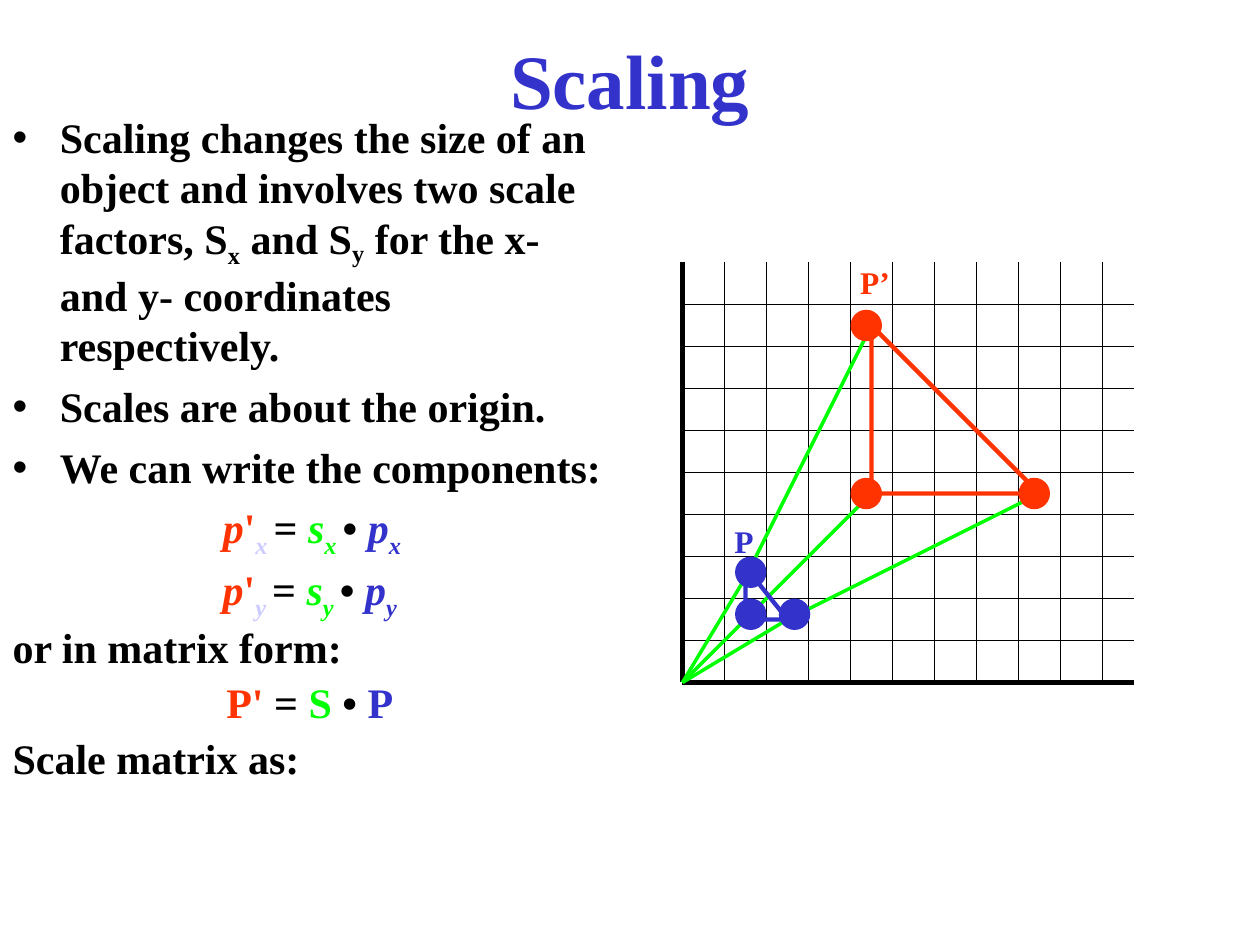
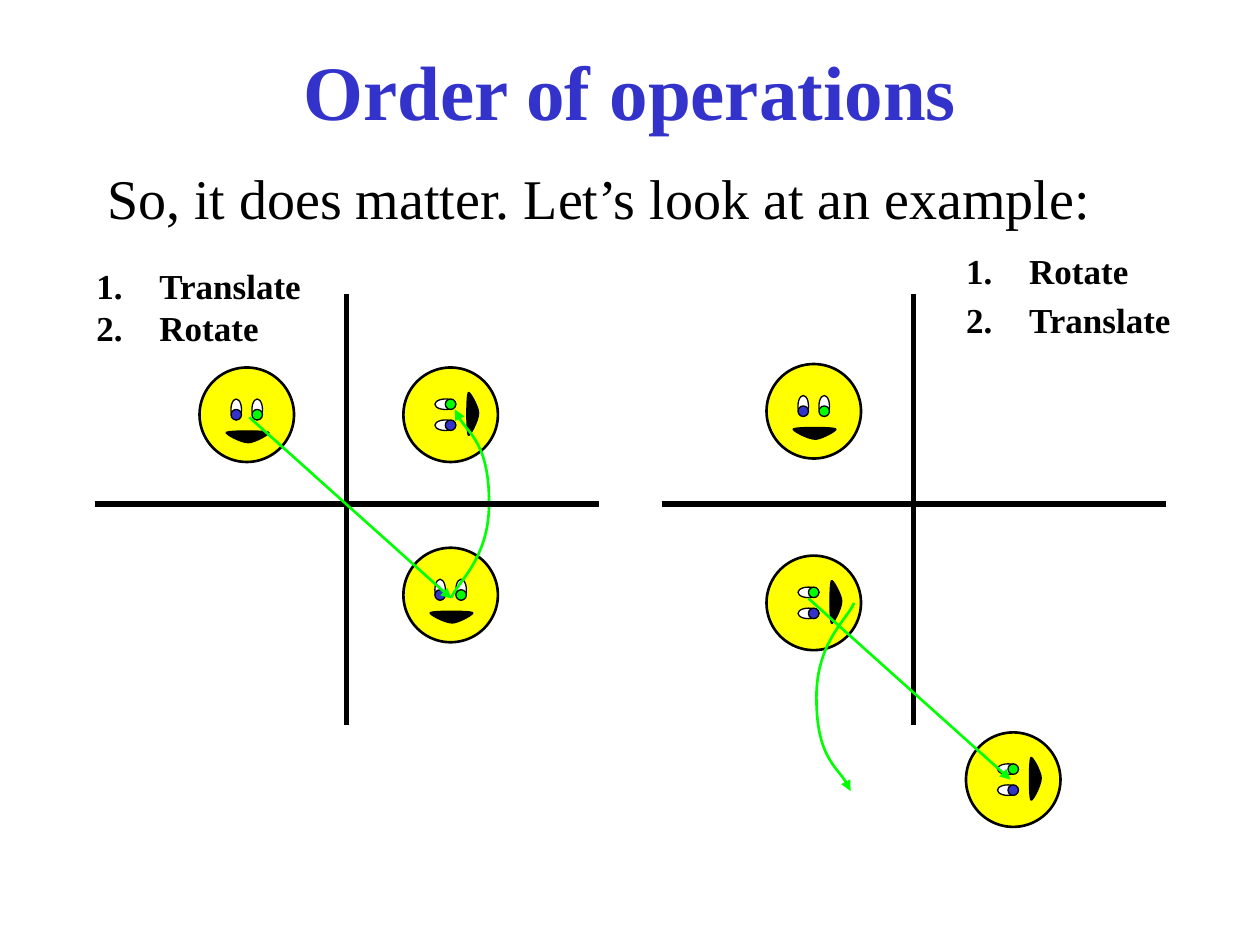
"""Build two slides on scaling and on the order of transformations."""
from lxml import etree
from pptx import Presentation
from pptx.dml.color import RGBColor
from pptx.enum.shapes import MSO_CONNECTOR, MSO_SHAPE
from pptx.enum.text import MSO_ANCHOR, MSO_AUTO_SIZE, PP_ALIGN
from pptx.oxml.ns import qn
from pptx.util import Pt

PX = 914400 // 144
FONT = "Times New Roman"
LEFT, CENTER = PP_ALIGN.LEFT, PP_ALIGN.CENTER
MIDDLE, TOP = MSO_ANCHOR.MIDDLE, MSO_ANCHOR.TOP
OVAL, STRAIGHT = MSO_SHAPE.OVAL, MSO_CONNECTOR.STRAIGHT
COLORS = {
    "black": "000000", "white": "FFFFFF", "blue": "3333CC", "red": "FF3300",
    "green": "00FF00", "pale": "CCCCFF", "yellow": "FFFF00",
}
MARKS = {
    "none": ("a:buNone", {}),
    "dot": ("a:buChar", {"char": "•"}),
    "number": ("a:buAutoNum", {"type": "arabicPeriod"}),
}


def finish(item, fill=None, line=None, weight=1, arrow=False):
    """Set fill, line and arrowhead, and switch the shadow off."""
    if hasattr(item, "fill"):
        if fill:
            item.fill.solid()
            item.fill.fore_color.rgb = RGBColor.from_string(COLORS[fill])
        else:
            item.fill.background()
    properties = item._element.spPr
    if line:
        item.line.color.rgb = RGBColor.from_string(COLORS[line])
        item.line.width = Pt(weight)
    else:
        item.line.fill.background()
    if arrow:
        etree.SubElement(properties.find(qn("a:ln")), qn("a:tailEnd"), type="triangle")
    etree.SubElement(properties, qn("a:effectLst"))


def write(shape, place, rows, size, bold=True, indent=0, gap=0, anchor=TOP, wrap=True):
    """Place a text shape and fill it with rows of (mark, align, spacing, spans)."""
    shape.left, shape.top, shape.width, shape.height = (value * PX for value in place)
    frame = shape.text_frame
    frame.auto_size = MSO_AUTO_SIZE.NONE
    frame.word_wrap = wrap
    frame.vertical_anchor = anchor
    for index, (mark, align, spacing, spans) in enumerate(rows):
        para = frame.add_paragraph() if index else frame.paragraphs[0]
        settings = para._p.get_or_add_pPr()
        settings.set("marL", str(indent * PX))
        settings.set("indent", str(-indent * PX))
        tag, attributes = MARKS[mark]
        if mark == "number":
            etree.SubElement(settings, qn("a:buFont"), typeface=FONT)
        etree.SubElement(settings, qn(tag), attributes)
        para.alignment, para.line_spacing = align, spacing
        para.space_before = Pt(gap)
        para.font.name, para.font.size, para.font.bold = FONT, Pt(size), bold
        for text, color, italic, baseline in spans:
            span = para.add_run()
            span.text = text
            span.font.color.rgb = RGBColor.from_string(COLORS[color])
            if italic:
                span.font.italic = True
            if baseline:
                span._r.get_or_add_rPr().set("baseline", str(baseline * 1000))


deck = Presentation()
deck.slide_width, deck.slide_height = 1440 * PX, 1080 * PX
scaling, order = [deck.slides.add_slide(deck.slide_layouts[1]) for _ in range(2)]

for page, text, place in [
    (scaling, "Scaling", (108, 0, 1224, 180)),
    (order, "Order of operations", (108, 48, 1224, 108)),
]:
    write(page.shapes.title, place,
          [("none", CENTER, 1.0, [(text, "blue", False, 0)])], 44, anchor=MIDDLE)

scaling_rows = [
    ("dot", LEFT, 1.0, [
        ("Scaling changes the size of an object and involves two scale factors, S",
         "black", False, 0),
        ("x", "black", False, -25),
        (" and S", "black", False, 0),
        ("y", "black", False, -20),
        (" for the x- and y- coordinates respectively.", "black", False, 0),
    ]),
]
for text in ("Scales are about the origin.", "We can write the components:"):
    scaling_rows.append(("dot", LEFT, 1.0, [(text, "black", False, 0)]))
for first, axis, last in [(" p", "x", "x "), ("p", "y", "y")]:
    scaling_rows.append(("none", CENTER, 0.9, [
        (first, "red", True, 0), ("'", "red", False, 0), (axis + " ", "pale", True, -25),
        ("= ", "black", False, 0),
        ("s", "green", True, 0), (axis + " ", "green", True, -25),
        ("• ", "black", False, 0),
        ("p", "blue", True, 0), (last, "blue", True, -25),
    ]))
scaling_rows += [
    ("none", LEFT, 0.9, [("or in matrix form:", "black", False, 0)]),
    ("none", CENTER, 0.9, [
        ("P' ", "red", False, 0), ("= ", "black", False, 0), ("S ", "green", False, 0),
        ("• ", "black", False, 0), ("P", "blue", False, 0),
    ]),
    ("none", LEFT, 0.9, [("Scale matrix as:", "black", False, 0)]),
]
write(scaling.placeholders[1], (0, 120, 708, 924), scaling_rows, 24, indent=54, gap=6)
write(order.placeholders[1], (108, 180, 1224, 72),
      [("none", LEFT, 1.0,
        [("So, it does matter. Let’s look at an example:", "black", False, 0)])],
      32, bold=False, indent=54, gap=8)

mouth = [(-24, -5), (-28, -4), (-8, 7), (1, 7), (8, 7), (28, -4), (24, -5),
         (19, -7), (-19, -7), (-24, -5)]
arc = [(-21, 108), (-14, 90), (22, 64), (22, 0), (22, -67), (-9, -85), (-17, -107)]
face_parts = [
    (0, 0, 108, 108, "yellow", 1.5),
    (-12, -6, 12, 24, "white", 0.75), (12, -6, 12, 24, "white", 0.75),
    (-12, 0, 12, 12, "blue", 0.75), (12, 0, 12, 12, "green", 0.75),
]
MOUTH_X, MOUTH_Y = 1, 25
outlines = []
for x, y, turned in [(282, 474, False), (515, 680, False), (515, 474, True),
                     (930, 470, False), (930, 689, True), (1158, 891, True)]:
    angle = 270 if turned else 0
    for dx, dy, width, height, fill, weight in face_parts:
        if turned:
            dx, dy = dy, -dx
        part = order.shapes.add_shape(
            OVAL, (x + dx) * PX - width * PX // 2, (y + dy) * PX - height * PX // 2,
            width * PX, height * PX)
        part.rotation = angle
        finish(part, fill, "black", weight)
    dx, dy = (MOUTH_Y, -MOUTH_X) if turned else (MOUTH_X, MOUTH_Y)
    outlines.append((mouth, x + dx, y + dy, angle, "black", "black", 0.75, False))

outlines += [
    (arc, 537, 575, 0, None, "green", 1.5, True),
    (arc, 954, 796, 180, None, "green", 1.5, True),
]
for points, x, y, angle, fill, line, weight, arrow in outlines:
    corners = [(x + dx, y + dy) for dx, dy in points]
    builder = order.shapes.build_freeform(*corners[0], scale=PX)
    builder.add_line_segments(corners[1:], close=not arrow)
    outline = builder.convert_to_shape()
    outline.rotation = angle
    segments = list(outline._element.iter(qn("a:lnTo")))
    for first in range(0, len(segments), 3):
        curve = etree.Element(qn("a:cubicBezTo"))
        segments[first].addprevious(curve)
        for segment in segments[first:first + 3]:
            curve.append(segment[0])
            segment.getparent().remove(segment)
    finish(outline, fill, line, weight, arrow)

ORIGIN, CELL, GRID_TOP, GRID_RIGHT = 780, 48, 300, 1296
lines = []
for column in range(11):
    x = ORIGIN + column * CELL
    lines.append((scaling, x, GRID_TOP, x, ORIGIN, "black", 0.75 if column else 3, False))
for row in range(10):
    y = ORIGIN - row * CELL
    lines.append((scaling, ORIGIN, y, GRID_RIGHT, y, "black", 0.75 if row else 3, False))
for x, y, scaled_x, scaled_y in [(852, 660, 996, 372), (852, 708, 996, 564),
                                 (900, 708, 1188, 564)]:
    lines.append((scaling, x, y, scaled_x, scaled_y, "green", 2, True))
    lines.append((scaling, x, y, ORIGIN, ORIGIN, "green", 2, False))
for center in (396, 1044):
    lines.append((order, center, 336, center, 828, "black", 3, False))
    lines.append((order, center - 288, 576, center + 288, 576, "black", 3, False))
lines += [
    (order, 285, 477, 516, 684, "green", 1.5, True),
    (order, 924, 684, 1155, 891, "green", 1.5, True),
]
for page, x1, y1, x2, y2, color, weight, arrow in lines:
    connector = page.shapes.add_connector(STRAIGHT, x1 * PX, y1 * PX, x2 * PX, y2 * PX)
    finish(connector, line=color, weight=weight, arrow=arrow)

DOT = 36
for color, corners, dots in [
    ("blue", [(852, 648), (900, 708), (852, 708)], [(840, 684), (890, 684), (840, 636)]),
    ("red", [(996, 372), (1188, 564), (996, 564)], [(972, 546), (1164, 546), (972, 354)]),
]:
    builder = scaling.shapes.build_freeform(*corners[0], scale=PX)
    builder.add_line_segments(corners[1:], close=True)
    finish(builder.convert_to_shape(), line=color, weight=2.5)
    for x, y in dots:
        finish(scaling.shapes.add_shape(OVAL, x * PX, y * PX, DOT * PX, DOT * PX), color)

for page, texts, color, mark, size, indent, gap, wrap, place in [
    (scaling, ["P"], "blue", "none", 18, 0, 0, True, (825, 590, 75, 58)),
    (scaling, ["P’"], "red", "none", 18, 0, 0, False, (969, 294, 62, 58)),
    (order, ["Translate", "Rotate"], "black", "number", 20, 72, 0, False,
     (96, 295, 265, 111)),
    (order, ["Rotate", "Translate"], "black", "number", 20, 72, 4, False,
     (1090, 278, 278, 121)),
]:
    x, y, width, height = place
    builder = page.shapes.build_freeform(x, y, scale=PX)
    builder.add_line_segments(
        [(x + width, y), (x + width, y + height), (x, y + height)], close=True)
    label = builder.convert_to_shape()
    finish(label)
    write(label, place, [(mark, LEFT, 1.0, [(text, color, False, 0)]) for text in texts],
          size, indent=indent, gap=gap, wrap=wrap)

deck.save("out.pptx")
